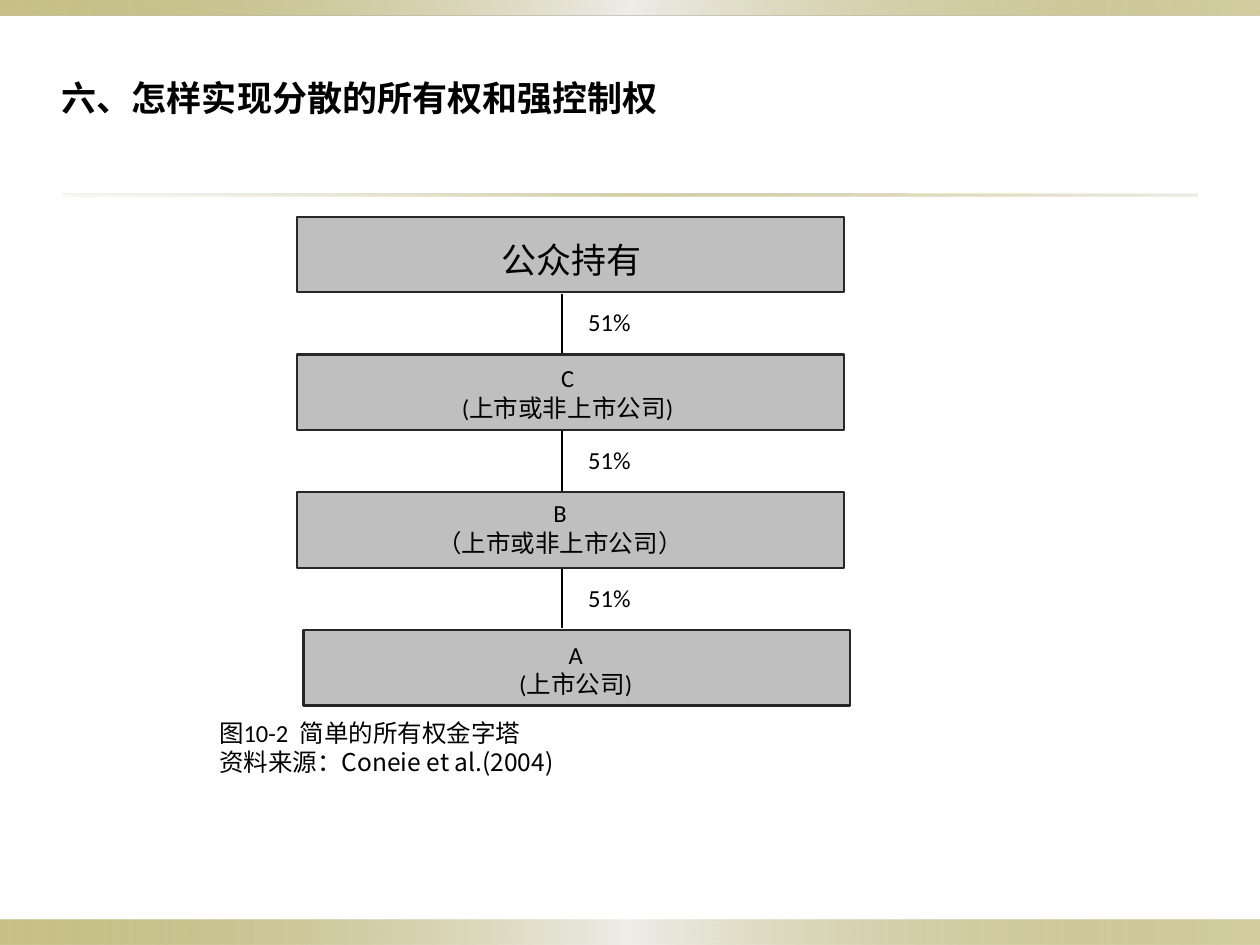
from dataclasses import dataclass
from lxml import etree
from pptx import Presentation
from pptx import util as u
from pptx.dml import color
from pptx.enum import shapes, text
from pptx.oxml import ns

LATIN, HAN = "Calibri", "Noto Sans CJK SC"
BLACK, GREY, EDGE = "000000", "BFBFBF", "272727"
OLIVE, PALE, SAND = "918415", "EEEDE8", "DCD9CC"
TOP, STEP, WIDE, HIGH = 1.72, 3.28 / 3, 4.34, 0.6
AXIS, GAP, LINK = 4.46, 0.61, 0.47


@dataclass
class Band:
    """A rule across the slide with a three-stop gradient."""
    left: float
    top: float
    width: float
    height: float
    stops: tuple


@dataclass
class Level:
    """One owner in the pyramid, with its text area."""
    lines: tuple
    left: float
    inset: float
    span: float
    drop: float
    size: int = 14


WASH = ((0, OLIVE, 50), (50, PALE, 100), (100, OLIVE, 40))
FADE = ((0, SAND, 20), (50, OLIVE, 40), (100, SAND, 50))
BANDS = (
    Band(0, 7.3, 10, 0.2, WASH),
    Band(0, 0, 10, 0.12, WASH),
    Band(0.5, 1.54, 9, 0.02, FADE),
)
LEVELS = (
    Level(("公众持有",), 2.36, 2.64, 3.79, 0.12, 20),
    Level(("C", "(上市或非上市公司)"), 2.36, 2.41, 4.19, 0.02),
    Level(("B", "（上市或非上市公司）"), 2.36, 2.33, 4.23, 0),
    Level(("A", "(上市公司)"), 2.41, 2.86, 3.42, 0.03),
)


def paint(code: str) -> color.RGBColor:
    """Turn a hex string into a colour."""
    return color.RGBColor.from_string(code)


def area(*sides: float) -> list:
    """Give lengths in inches."""
    return [u.Inches(side) for side in sides]


def style(para, size: int, face: str = LATIN, bold: bool = False) -> None:
    """Format each run of a paragraph."""
    form = {"size": u.Pt(size), "name": face, "bold": bold}
    for run in para.runs:
        run.font.color.rgb = paint(BLACK)
        for key, value in form.items():
            setattr(run.font, key, value)
        han = etree.SubElement(run.font._element, ns.qn("a:ea"))
        han.set("typeface", HAN)


def write(slide, sides: tuple, lines: tuple, align, size: int = 14,
          faces: tuple = (LATIN, LATIN)) -> None:
    """Add a wrapped text box with one paragraph a line."""
    frame = slide.shapes.add_textbox(*area(*sides)).text_frame
    frame.word_wrap = True
    frame.text = "\n".join(lines)
    for para, face in zip(frame.paragraphs, faces):
        para.alignment = align
        style(para, size, face)


def block(slide, sides: tuple):
    """Add a rectangle without shadow or line."""
    shape = slide.shapes.add_shape(shapes.MSO_SHAPE.RECTANGLE, *area(*sides))
    shape.shadow.inherit = False
    shape.line.fill.background()
    return shape


def draw_band(slide, band: Band) -> None:
    """Draw a band and set its gradient stops."""
    shape = block(slide, (band.left, band.top, band.width, band.height))
    shape.fill.gradient()
    shape.fill.gradient_angle = 0
    stops = shape._element.spPr.find(".//" + ns.qn("a:gsLst"))
    for old in list(stops):
        stops.remove(old)
    for place, code, alpha in band.stops:
        stop = etree.SubElement(stops, ns.qn("a:gs"), pos=str(place * 1000))
        tint = etree.SubElement(stop, ns.qn("a:srgbClr"), val=code)
        etree.SubElement(tint, ns.qn("a:alpha"), val=str(alpha * 1000))


def draw_level(slide, level: Level, top: float) -> None:
    """Draw an owner's box and its text."""
    shape = block(slide, (level.left, top, WIDE, HIGH))
    shape.fill.solid()
    shape.fill.fore_color.rgb = paint(GREY)
    shape.line.color.rgb = paint(EDGE)
    shape.line.width = u.Pt(1.25)
    write(slide, (level.inset, top + level.drop, level.span, HIGH),
          level.lines, text.PP_ALIGN.CENTER, level.size)


def draw_link(slide, top: float) -> None:
    """Draw a holding line with its share."""
    ends = area(AXIS, top, AXIS, top + LINK)
    line = slide.shapes.add_connector(shapes.MSO_CONNECTOR.STRAIGHT, *ends)
    line.line.color.rgb = paint(BLACK)
    line.line.width = u.Pt(1.25)
    etree.SubElement(line._element.spPr, ns.qn("a:effectLst"))
    write(slide, (4.57, top + 0.06, 1.3, 0.35), ("51%",),
          text.PP_ALIGN.JUSTIFY)


def draw_title(slide, words: str) -> None:
    """Place and format the title."""
    title = slide.shapes.title
    sides = dict(zip(("left", "top", "width", "height"),
                     area(0.39, 0.55, 5, 0.44)))
    for key, value in sides.items():
        setattr(title, key, value)
    frame = title.text_frame
    frame.text = words
    form = {"word_wrap": False, "vertical_anchor": text.MSO_ANCHOR.MIDDLE,
            "auto_size": text.MSO_AUTO_SIZE.SHAPE_TO_FIT_TEXT}
    for key, value in form.items():
        setattr(frame, key, value)
    frame.paragraphs[0].alignment = text.PP_ALIGN.LEFT
    style(frame.paragraphs[0], 20, bold=True)


def main() -> None:
    """Build the slide and save it."""
    deck = Presentation()
    deck.slide_width, deck.slide_height = area(10, 7.5)
    slide = deck.slides.add_slide(deck.slide_layouts[5])
    for band in BANDS:
        draw_band(slide, band)
    draw_title(slide, "六、怎样实现分散的所有权和强控制权")
    for row, level in enumerate(LEVELS):
        top = TOP + row * STEP
        if row < len(LEVELS) - 1:
            draw_link(slide, top + GAP)
        draw_level(slide, level, top)
    write(slide, (1.64, 5.65, 5.86, 0.57),
          ("图10-2  简单的所有权金字塔", "资料来源：Coneie et al.(2004)"),
          text.PP_ALIGN.JUSTIFY, faces=(LATIN, HAN))
    deck.save("out.pptx")


if __name__ == "__main__":
    main()
